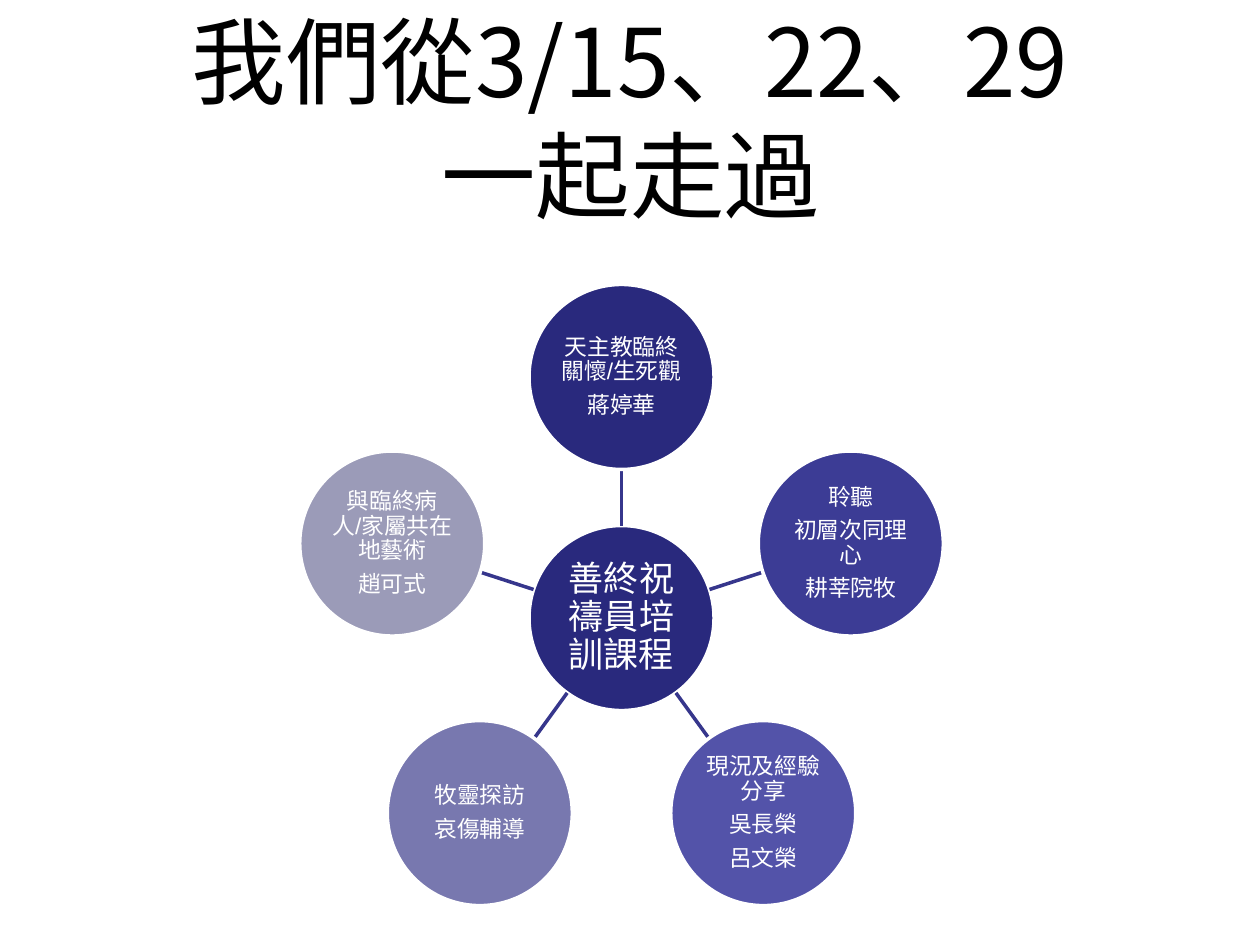
"""Build a slide with a radial diagram of the prayer companion course."""
from math import cos, radians, sin

from lxml import etree
from pptx import Presentation
from pptx.dml.color import RGBColor
from pptx.enum.shapes import MSO_CONNECTOR, MSO_SHAPE
from pptx.enum.text import MSO_ANCHOR, PP_ALIGN
from pptx.oxml.ns import qn
from pptx.util import Cm, Pt

OVAL = MSO_SHAPE.OVAL
LINE = MSO_CONNECTOR.STRAIGHT
MID = MSO_ANCHOR.MIDDLE
CENTER = PP_ALIGN.CENTER

HUES = {"ink": "000000", "white": "FFFFFF", "spoke": "36368C", "hub": "29297D",
        "care": "29297D", "listen": "3C3C95", "share": "5353A9",
        "visit": "7878AF", "art": "9B9BB8"}
TITLE = "我們從3/15、22、29\v一起走過"
HUB = "善終祝禱員培訓課程"
NODES = [
    ("care", "天主教臨終關懷/生死觀\n蔣婷華"),
    ("listen", "聆聽\n初層次同理心\n耕莘院牧"),
    ("share", "現況及經驗分享\n吳長榮\n呂文榮"),
    ("visit", "牧靈探訪\n哀傷輔導"),
    ("art", "與臨終病人/家屬共在地藝術\n趙可式"),
]
MID_X, MID_Y = 12.53, 12.46
SIZE, REACH = 3.73, 4.86


def hue(name):
    return RGBColor.from_string(HUES[name])


def write(frame, text, size=13, font="Arial", color="white", pad=0.03,
          lead=0.9, after=0):
    """Fill a text frame with centred paragraphs."""
    frame.word_wrap = True
    frame.vertical_anchor = MID
    frame.margin_left = frame.margin_right = Cm(pad)
    frame.margin_top = frame.margin_bottom = Cm(pad)
    frame.text = text
    for para in frame.paragraphs:
        para.alignment = CENTER
        para.line_spacing = lead
        para.space_before = Pt(0)
        para.space_after = Pt(after)
        for run in para.runs:
            run.font.size = Pt(size)
            run.font.name = font
            run.font.color.rgb = hue(color)


def polar(angle, dist):
    turn = radians(angle)
    return MID_X + dist * sin(turn), MID_Y - dist * cos(turn)


class Deck:
    """Hold the current slide and draw its parts in one style."""

    def __init__(self, show):
        self.slide = show.slides.add_slide(show.slide_layouts[5])
        self.edge = Pt(2)

    def title(self, text):
        head = self.slide.shapes.title
        head.left, head.top = Cm(1.27), Cm(0.76)
        head.width, head.height = Cm(22.86), Cm(3.18)
        write(head.text_frame, text, size=54, font="Noto Sans CJK SC",
              color="ink", pad=0.13, lead=1)

    def disc(self, x, y, fill, text, **form):
        disc = self.slide.shapes.add_shape(
            OVAL, Cm(x - SIZE / 2), Cm(y - SIZE / 2), Cm(SIZE), Cm(SIZE))
        disc.shadow.inherit = False
        disc.fill.solid()
        disc.fill.fore_color.rgb = hue(fill)
        disc.line.color.rgb = hue("white")
        disc.line.width = self.edge
        write(disc.text_frame, text, **form)

    def spoke(self, angle):
        ends = polar(angle, SIZE / 2) + polar(angle, REACH - SIZE / 2)
        spoke = self.slide.shapes.add_connector(LINE, *map(Cm, ends))
        spoke.line.color.rgb = hue("spoke")
        spoke.line.width = self.edge
        etree.SubElement(spoke.element.spPr, qn("a:effectLst"))


def main():
    show = Presentation()
    show.slide_width, show.slide_height = Cm(25.4), Cm(19.05)
    deck = Deck(show)
    deck.title(TITLE)
    deck.disc(MID_X, MID_Y, "hub", HUB, size=20, after=7)
    step = 360 / len(NODES)
    for i, (fill, text) in enumerate(NODES):
        deck.spoke(i * step)
        deck.disc(*polar(i * step, REACH), fill, text, after=5)
    show.save("out.pptx")


if __name__ == "__main__":
    main()
